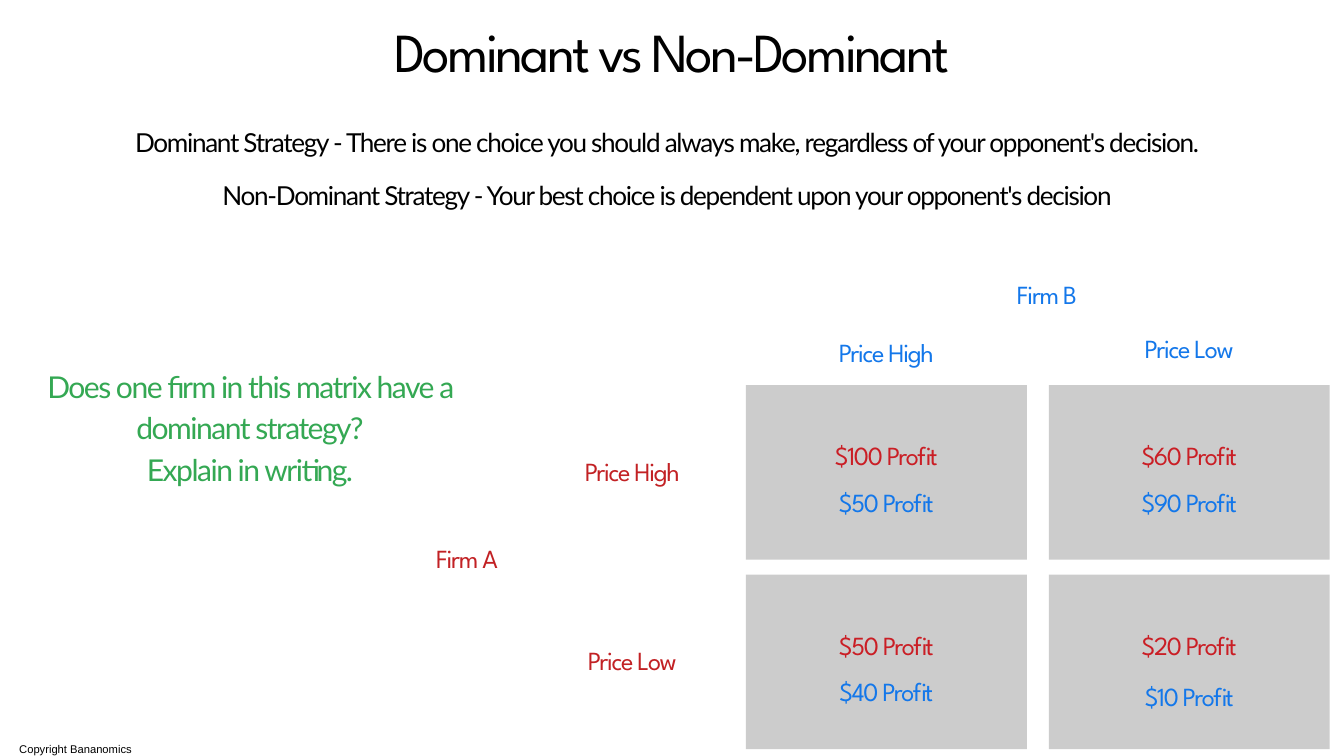
from pptx import Presentation
from pptx.dml.color import RGBColor
from pptx.enum import shapes, text
from pptx.util import Pt

COLORS = {
    "black": "000000",
    "cell": "CCCCCC",
    "firm_a": "C22124",
    "profit_a": "CA1E25",
    "firm_b": "1377EA",
    "question": "34A853",
}

# Each style: font values, line spacing and letter spacing (points)
STYLES = {
    "title": ({"name": "League Spartan", "size": Pt(59)}, 56, -3),
    "label": ({"name": "League Spartan", "size": Pt(28)}, 26.6, -1.4),
    "definition": ({"name": "Lato", "size": Pt(28)}, 38.9, -1.4),
    "question": ({"name": "Lato", "size": Pt(32.2)}, 44.8, -1.6),
    "copyright": ({"name": "Arial", "size": Pt(12)}, 16.8, 0),
}

# Payoff matrix geometry
MATRIX_LEFT, MATRIX_TOP = 799.2, 412.56
CELL_W, CELL_H = 300.96, 187.2
PITCH_X, PITCH_Y = 324.5, 203.04
LABEL_W, LABEL_H = 195.84, 28.08
LABEL_INSET = (CELL_W - LABEL_W) / 2

CHOICES = ["Price High", "Price Low"]
CHOICE_B_TOPS = [367.92, 363.6]
# (Firm A profit, Firm B profit, top of the Firm B profit within its cell)
PAYOFFS = [
    [("$100 Profit", "$50 Profit", 115.2), ("$60 Profit", "$90 Profit", 115.2)],
    [("$50 Profit", "$40 Profit", 115.2), ("$20 Profit", "$10 Profit", 120.24)],
]


def add_text(slide, lines, box, style, color):
    font_values, line_spacing, tracking = STYLES[style]
    frame = slide.shapes.add_textbox(*map(Pt, box)).text_frame
    frame_format = {
        "word_wrap": True,
        "margin_left": 0,
        "margin_top": 0,
        "margin_right": 0,
        "margin_bottom": 0,
        "auto_size": text.MSO_AUTO_SIZE.SHAPE_TO_FIT_TEXT,
    }
    for key, value in frame_format.items():
        setattr(frame, key, value)
    for i, line in enumerate(lines):
        paragraph = frame.add_paragraph() if i else frame.paragraphs[0]
        paragraph.alignment = text.PP_ALIGN.CENTER
        paragraph.line_spacing = Pt(line_spacing)
        run = paragraph.add_run()
        run.text = line
        for key, value in font_values.items():
            setattr(run.font, key, value)
        run.font.color.rgb = RGBColor.from_string(COLORS[color])
        if tracking:
            run._r.get_or_add_rPr().set("spc", str(round(tracking * 100)))


def add_label(slide, label, left, top, color):
    add_text(slide, [label], (left, top, LABEL_W, LABEL_H), "label", color)


def add_cell(slide, left, top):
    cell = slide.shapes.add_shape(
        shapes.MSO_SHAPE.RECTANGLE, Pt(left), Pt(top), Pt(CELL_W), Pt(CELL_H))
    cell.shadow.inherit = False
    cell.fill.solid()
    cell.fill.fore_color.rgb = RGBColor.from_string(COLORS["cell"])
    cell.line.fill.background()


def add_matrix(slide):
    # Firm names
    add_label(slide, "Firm A", 402.48, 588.24, "firm_a")
    add_label(slide, "Firm B", 1023.84, 305.28, "firm_b")

    # Choices of each firm
    for i, choice in enumerate(CHOICES):
        add_label(slide, choice, 579.6, MATRIX_TOP + i * PITCH_Y + 82.08, "firm_a")
        add_label(slide, choice, MATRIX_LEFT + i * PITCH_X + LABEL_INSET,
                  CHOICE_B_TOPS[i], "firm_b")

    # Cells with both profits
    for row, payoffs in enumerate(PAYOFFS):
        for column, (profit_a, profit_b, profit_b_top) in enumerate(payoffs):
            left = MATRIX_LEFT + column * PITCH_X
            top = MATRIX_TOP + row * PITCH_Y
            add_cell(slide, left, top)
            add_label(slide, profit_a, left + LABEL_INSET, top + 65.52, "profit_a")
            add_label(slide, profit_b, left + LABEL_INSET, top + profit_b_top, "firm_b")


def main():
    deck = Presentation()
    deck.slide_width, deck.slide_height = Pt(1440), Pt(810)
    slide = deck.slides.add_slide(deck.slide_layouts[6])

    # Title and definitions
    add_text(slide, ["Dominant vs Non-Dominant"],
             (76.32, 33.84, 1287.36, 61.92), "title", "black")
    definitions = [
        "Dominant Strategy - There is one choice you should always make, "
        "regardless of your opponent's decision.",
        "Non-Dominant Strategy - Your best choice is dependent upon "
        "your opponent's decision",
    ]
    for i, definition in enumerate(definitions):
        add_text(slide, [definition], (76.32, 129.6 + i * 57.6, 1276.56, 39.6),
                 "definition", "black")

    add_matrix(slide)

    # Question and copyright line
    add_text(slide, ["Does one firm in this matrix have a dominant strategy?",
                     "Explain in writing."],
             (46.8, 388.08, 442.08, 133.2), "question", "question")
    add_text(slide, ["Copyright Bananomics"],
             (-146.88, 792.72, 455.76, 17.28), "copyright", "black")

    deck.save("out.pptx")


if __name__ == "__main__":
    main()
